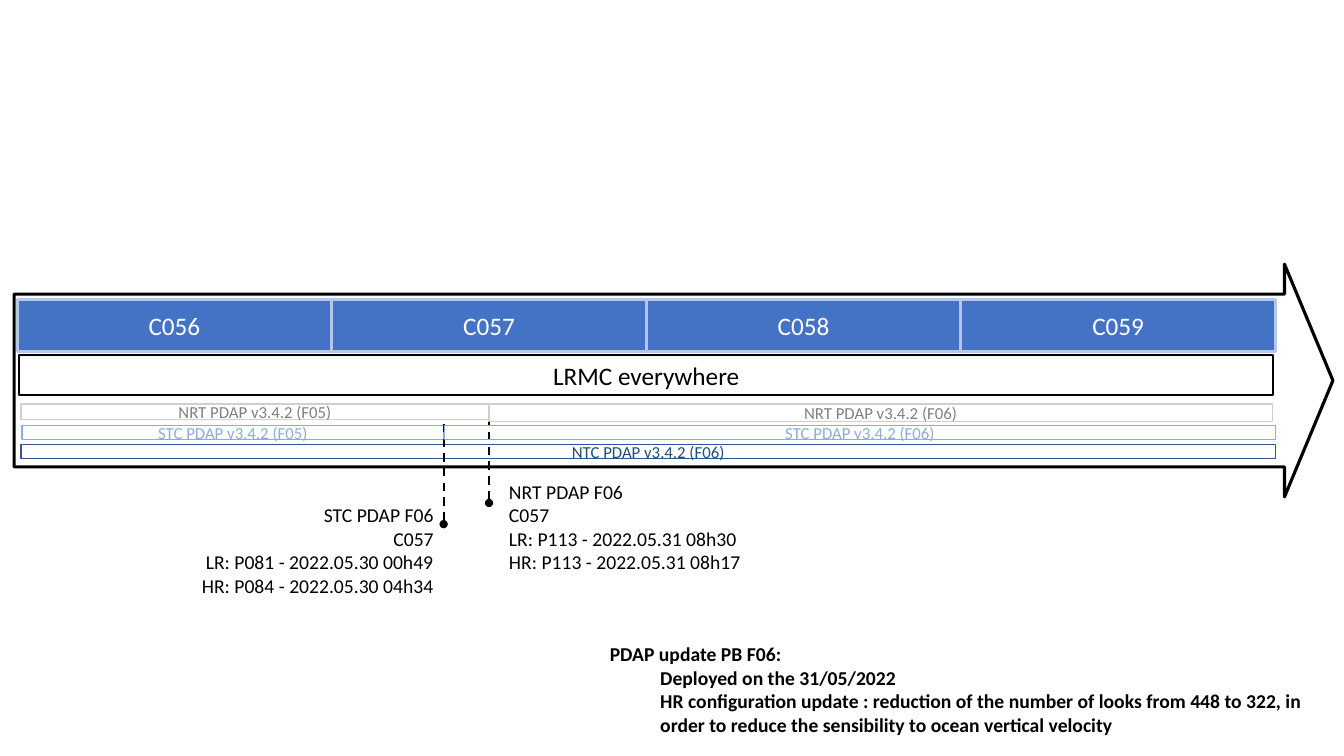
"""Build a timeline slide of PDAP versions over cycles C056 to C059."""
import pptx
import pptx.util
import pptx.dml.color
import pptx.enum.dml
import pptx.enum.shapes
import pptx.enum.text
import pptx.oxml

PX = 9144
FONT = "Calibri"
SHAPE = pptx.enum.shapes.MSO_SHAPE
ALIGN = pptx.enum.text.PP_ALIGN

SIZE = (1333, 750)
ARROW = (14, 262, 1308, 231)
ARROW_ADJUSTMENTS = (0.742, 0.208)

CYCLES = ["C056", "C057", "C058", "C059"]
CYCLE_LEFT, CYCLE_TOP, CYCLE_WIDTH, CYCLE_HEIGHT = 17, 297, 312, 52

MODE = ("LRMC everywhere", (19, 352, 1244, 40))

BACK_BARS = [
    ("STC PDAP v3.4.2 (F05)", (22, 422, 418, 14), None, "8FAADC", "8FAADC"),
    ("NRT PDAP v3.4.2 (F05)", (21, 401, 464, 15), "FFFFFF", "D0CECE", "808080"),
    ("NTC PDAP v3.4.2 (F06)", (21, 441, 1244, 14), "FFFFFF", "2F5597", "1F4E79"),
]
FRONT_BARS = [
    ("NRT PDAP v3.4.2 (F06)", (485, 401, 777, 17), "FFFFFF", "D0CECE", "808080"),
    ("STC PDAP v3.4.2 (F06)", (441, 422, 824, 14), None, "8FAADC", "8FAADC"),
]

MARKERS = [(485, 499, 401), (440, 520, 421)]

NOTES = [
    ((495, 471, 260, 104), ALIGN.LEFT, False, [
        (0, "NRT PDAP F06"),
        (0, "C057"),
        (0, "LR: P113 - 2022.05.31 08h30"),
        (0, "HR: P113 - 2022.05.31 08h17"),
    ]),
    ((180, 494, 260, 104), ALIGN.RIGHT, False, [
        (0, "STC PDAP F06"),
        (0, "C057"),
        (0, "LR: P081 - 2022.05.30 00h49"),
        (0, "HR: P084 - 2022.05.30 04h34"),
    ]),
    ((595, 632, 727, 104), ALIGN.LEFT, True, [
        (0, "PDAP update PB F06:"),
        (1, "Deployed on the 31/05/2022"),
        (1, "HR configuration update : reduction of the number of looks from 448 to 322, "
            "in order to reduce the sensibility to ocean vertical velocity"),
    ]),
]


def rgb(value):
    """Turn a hex string into a colour."""
    return pptx.dml.color.RGBColor.from_string(value)


def emu(values):
    """Turn lengths in px into EMU."""
    return [v * PX for v in values]


def write(p, text, size=14, color="000000", bold=False, align=ALIGN.LEFT, level=0):
    """Write one formatted run into a paragraph."""
    p.alignment = align
    if level:
        p.level = level
        pPr = p._p.get_or_add_pPr()
        pPr.set("marL", str(50 * PX * level))
        pPr.set("indent", "0")
    r = p.add_run()
    r.text = text
    r.font.name = FONT
    r.font.size = pptx.util.Pt(size)
    r.font.bold = bold
    r.font.color.rgb = rgb(color)


def add_box(s, box, kind=SHAPE.RECTANGLE, fill="FFFFFF", line="000000", width=1,
            text=None, size=12, color="000000"):
    """Add an outlined shape with optional centred text."""
    sp = s.shapes.add_shape(kind, *emu(box))
    sp.shadow.inherit = False
    if fill:
        sp.fill.solid()
        sp.fill.fore_color.rgb = rgb(fill)
    else:
        sp.fill.background()
    sp.line.color.rgb = rgb(line)
    sp.line.width = pptx.util.Pt(width)
    if text:
        tf = sp.text_frame
        tf.vertical_anchor = pptx.enum.text.MSO_ANCHOR.MIDDLE
        write(tf.paragraphs[0], text, size=size, color=color, align=ALIGN.CENTER)
    return sp


def add_bars(s, bars):
    """Add the thin version bars."""
    for text, box, fill, line, color in bars:
        add_box(s, box, fill=fill, line=line, text=text, color=color)


def add_marker(s, x, bottom, top):
    """Add a dashed line with a dot at its lower end."""
    c = s.shapes.add_connector(pptx.enum.shapes.MSO_CONNECTOR.STRAIGHT,
                               *emu((x, bottom, x, top)))
    c.line.color.rgb = rgb("000000")
    c.line.width = pptx.util.Pt(1.5)
    c.line.dash_style = pptx.enum.dml.MSO_LINE.DASH
    ns = 'xmlns:a="http://schemas.openxmlformats.org/drawingml/2006/main"'
    c.line._get_or_add_ln().append(pptx.oxml.parse_xml(f'<a:headEnd {ns} type="oval"/>'))
    c._element.spPr.append(pptx.oxml.parse_xml(f"<a:effectLst {ns}/>"))


def add_note(s, box, align, bold, lines):
    """Add a text box with one paragraph per line."""
    tf = s.shapes.add_textbox(*emu(box)).text_frame
    tf.word_wrap = True
    for i, (level, text) in enumerate(lines):
        p = tf.add_paragraph() if i else tf.paragraphs[0]
        write(p, text, bold=bold, align=align, level=level)


def main():
    """Build and save the slide."""
    prs = pptx.Presentation()
    prs.slide_width, prs.slide_height = emu(SIZE)
    s = prs.slides.add_slide(prs.slide_layouts[6])

    arrow = add_box(s, ARROW, kind=SHAPE.RIGHT_ARROW, width=2.25)
    for i, value in enumerate(ARROW_ADJUSTMENTS):
        arrow.adjustments[i] = value

    for i, cycle in enumerate(CYCLES):
        box = (CYCLE_LEFT + i * CYCLE_WIDTH, CYCLE_TOP, CYCLE_WIDTH, CYCLE_HEIGHT)
        add_box(s, box, fill="4472C4", line="B4C7E7", width=2.25,
                text=cycle, size=18, color="FFFFFF")

    add_bars(s, BACK_BARS)
    text, box = MODE
    add_box(s, box, width=1.5, text=text, size=18)
    for marker in MARKERS:
        add_marker(s, *marker)
    for note in NOTES:
        add_note(s, *note)
    add_bars(s, FRONT_BARS)

    prs.save("out.pptx")


if __name__ == "__main__":
    main()
